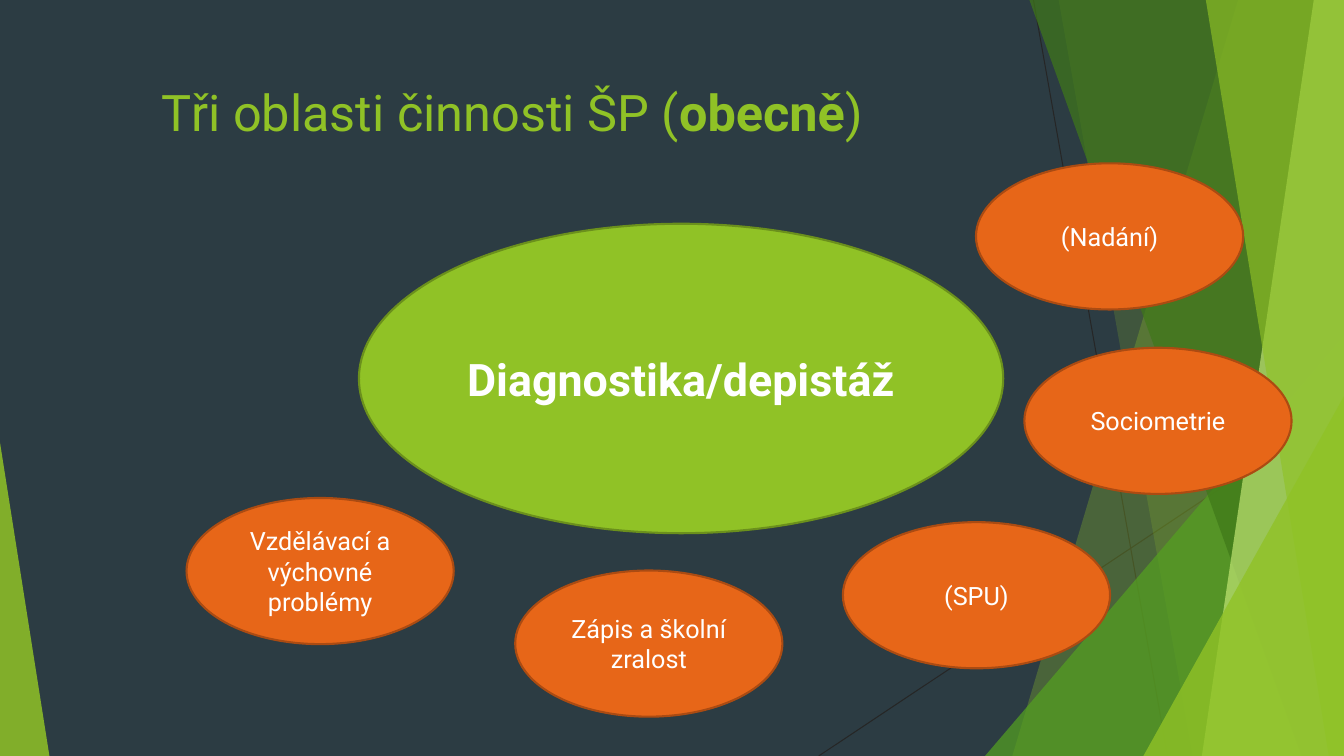
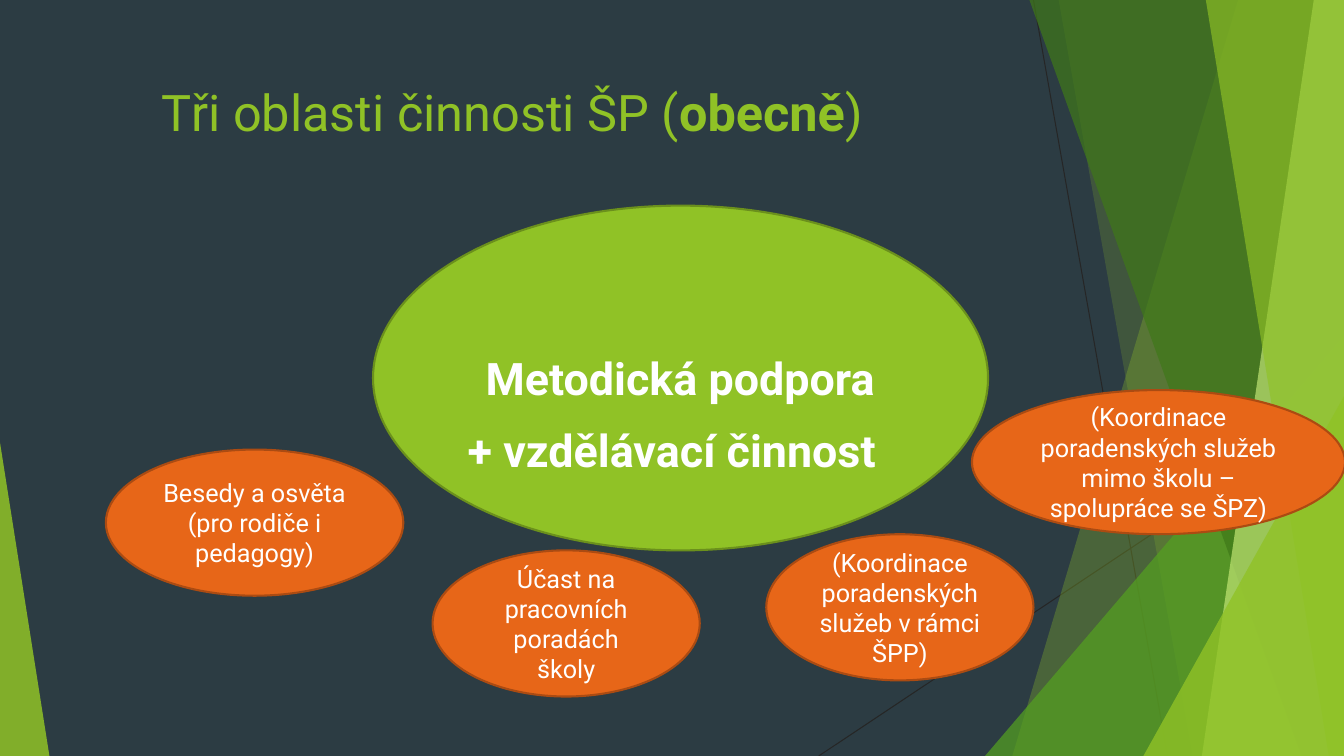
from lxml import etree
from pptx import Presentation
from pptx.dml.color import RGBColor
from pptx.enum.shapes import MSO_CONNECTOR, MSO_SHAPE
from pptx.enum.text import MSO_ANCHOR, PP_ALIGN
from pptx.oxml.ns import qn
from pptx.util import Inches, Pt

W, H = 13.33, 7.5
FONT = "Roboto"
COLORS = {
    "bg": "2C3C43", "green": "90C226", "green_line": "6B901C",
    "mid": "54A021", "dark": "3F7819", "pale": "C0E474",
    "orange": "E76618", "orange_line": "AB4B12",
    "white": "FFFFFF", "thin": "262626",
}
TITLE = [("Tři oblasti činnosti ŠP (", False), ("obecně", True), (")", False)]
SMALL = (2.65, 1.45)  # usual size of a topic ellipse


def rgb(name):
    return RGBColor.from_string(COLORS[name])


def add_run(p, text, size, color, bold=False):
    r = p.add_run()
    r.text = text
    r.font.name, r.font.size, r.font.bold = FONT, Pt(size), bold
    r.font.color.rgb = rgb(color)


# Background facets
def style_facet(sp, color, alpha):
    sp.shadow.inherit = False
    sp.fill.solid()
    sp.fill.fore_color.rgb = rgb(color)
    clr = sp.fill._xPr.find(".//" + qn("a:srgbClr"))
    etree.SubElement(clr, qn("a:alpha")).set("val", str(alpha * 1000))
    sp.line.fill.background()


def add_thin_line(shapes, x1, y1, x2, y2):
    line = shapes.add_connector(MSO_CONNECTOR.STRAIGHT, Inches(x1), Inches(y1),
                                Inches(x2), Inches(y2))
    line.line.color.rgb = rgb("thin")
    line.line.width = Pt(0.75)
    etree.SubElement(line._element.spPr, qn("a:effectLst"))


def add_band(shapes, top_x, bottom_x, color, alpha):
    """Full-height band from a slanted left edge to the right slide edge."""
    fb = shapes.build_freeform(Inches(top_x), Inches(0), scale=1.0)
    fb.add_line_segments([(Inches(x), Inches(y)) for x, y in
                          ((W, 0), (W, H), (bottom_x, H))], close=True)
    style_facet(fb.convert_to_shape(), color, alpha)


def add_corner(shapes, x, y, w, apex, color, alpha):
    """Right triangle standing on the bottom edge."""
    sp = shapes.add_shape(MSO_SHAPE.ISOSCELES_TRIANGLE, Inches(x), Inches(y),
                          Inches(w), Inches(H - y))
    sp.adjustments[0] = apex
    style_facet(sp, color, alpha)


def add_facets(shapes):
    add_thin_line(shapes, 10.25, 0, 11.58, H)
    add_thin_line(shapes, W, 4.03, 8.12, H)
    add_band(shapes, 12.28, 10.04, "green", 30)
    add_band(shapes, 10.5, 11.83, "green", 20)
    add_corner(shapes, 9.77, 3.33, 3.56, 1, "mid", 72)
    add_band(shapes, 10.21, 12.91, "dark", 70)
    add_band(shapes, 13.03, 11.92, "pale", 70)
    add_band(shapes, 11.96, 13.18, "green", 65)
    add_corner(shapes, 11.34, 3.93, 1.99, 1, "green", 80)
    add_corner(shapes, 0, 4.39, 0.49, 0, "green", 85)


def set_up_layout(prs, layout, s):
    """Give the master its background and the layout its facets and title box."""
    fill = prs.slide_master.background.fill
    fill.solid()
    fill.fore_color.rgb = rgb("bg")
    group = s.shapes.add_group_shape()
    add_facets(group.shapes)
    layout.shapes.element.insert(2, group._element)
    title = layout.placeholders[0]
    title.left, title.top = Inches(1.5), Inches(0.75)
    title.width, title.height = Inches(10.5), Inches(0.84)


# Slide content
def add_title(s):
    tf = s.shapes.title.text_frame
    tf.vertical_anchor = MSO_ANCHOR.TOP
    p = tf.paragraphs[0]
    p.alignment = PP_ALIGN.LEFT
    for text, bold in TITLE:
        add_run(p, text, 36, "green", bold)


def add_ellipse(s, box, text, color, size, bold=False):
    sp = s.shapes.add_shape(MSO_SHAPE.OVAL, *(Inches(v) for v in box))
    sp.shadow.inherit = False
    sp.fill.solid()
    sp.fill.fore_color.rgb = rgb(color)
    sp.line.color.rgb = rgb(color + "_line")
    sp.line.width = Pt(1.5)
    tf = sp.text_frame
    tf.word_wrap = True
    tf.vertical_anchor = MSO_ANCHOR.MIDDLE
    p = tf.paragraphs[0]
    p.alignment = PP_ALIGN.CENTER
    add_run(p, text, size, "white", bold)


def add_topic_map(s, box, heading, topics):
    """Central green ellipse with orange topics around it."""
    add_title(s)
    add_ellipse(s, box, heading, "green", 32, True)
    for x, y, (w, h), text in topics:
        add_ellipse(s, (x, y, w, h), text, "orange", 18)


def add_second_heading(s, box, text):
    tf = s.shapes.add_textbox(*(Inches(v) for v in box)).text_frame
    tf.word_wrap = True
    add_run(tf.paragraphs[0], text, 32, "white", True)


def main():
    prs = Presentation()
    prs.slide_width, prs.slide_height = Inches(W), Inches(H)
    layout = prs.slide_layouts[5]

    # Diagnostics
    s = prs.slides.add_slide(layout)
    set_up_layout(prs, layout, s)
    add_topic_map(s, (3.56, 2.22, 6.39, 3.07), "Diagnostika/depistáž", [
        (5.11, 5.66, SMALL, "Zápis a školní zralost"),
        (8.36, 5.18, SMALL, "(SPU)"),
        (1.85, 4.94, SMALL, "Vzdělávací a výchovné problémy"),
        (10.16, 3.45, SMALL, "Sociometrie"),
        (9.68, 1.62, SMALL, "(Nadání)"),
    ])

    # Methodical support
    s = prs.slides.add_slide(layout)
    add_topic_map(s, (3.7, 2.04, 6.1, 3.42), "Metodická podpora", [
        (1.05, 4.46, (2.95, 1.45), "Besedy a osvěta (pro rodiče i pedagogy)"),
        (4.29, 5.46, SMALL, "Účast na pracovních poradách školy"),
        (7.6, 5.3, SMALL, "(Koordinace poradenských služeb v rámci ŠPP)"),
        (9.64, 3.87, (3.7, 1.43),
         "(Koordinace poradenských služeb mimo školu – spolupráce se ŠPZ)"),
    ])
    add_second_heading(s, (4.54, 4.14, 4.56, 0.64), "+ vzdělávací činnost")

    prs.save("out.pptx")


if __name__ == "__main__":
    main()
